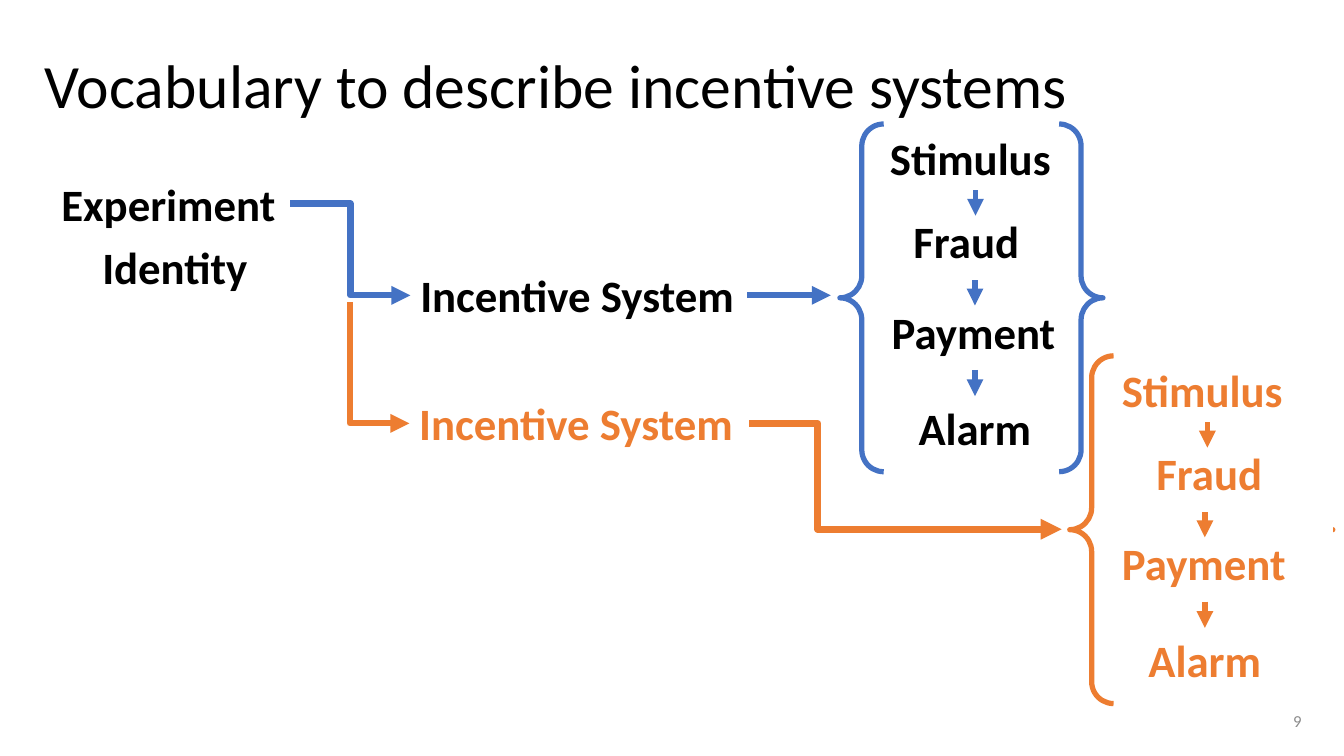
from dataclasses import dataclass

from pptx import Presentation
from pptx.dml.color import RGBColor as Rgb
from pptx.enum.shapes import MSO_CONNECTOR as Wire, MSO_SHAPE as Form
from pptx.enum.text import MSO_ANCHOR as Anchor, MSO_AUTO_SIZE as Fit, PP_ALIGN as Align
from pptx.oxml.ns import qn
from pptx.shapes.autoshape import Shape
from pptx.shapes.connector import Connector
from pptx.slide import Slide
from pptx.util import Inches, Pt
from lxml.etree import SubElement as add_node


@dataclass(frozen=True)
class Theme:
    font: str = "Calibri"
    black: str = "000000"
    white: str = "FFFFFF"
    gray: str = "8C8C8C"
    blue: str = "4472C4"
    orange: str = "ED7D31"
    title: float = 44
    label: float = 32
    number: float = 12
    brace: float = 3.75
    step: float = 4
    branch: float = 4.5
    drop: float = 5


@dataclass(frozen=True)
class Box:
    left: float
    top: float
    width: float
    height: float = 0.64

    def place(self) -> list[int]:
        return [Inches(n) for n in (self.left, self.top, self.width, self.height)]


@dataclass(frozen=True)
class Step:
    text: str
    left: float
    width: float


@dataclass(frozen=True)
class Flow:
    steps: tuple[Step, ...]
    left: float
    drop: float
    ink: str
    line: str
    half: bool = False


THEME = Theme()
TOPS = (1.25, 2.07, 2.97, 3.93)
SPANS = ((1.89, 2.14), (2.78, 3.03), (3.67, 3.93))
FLOWS = (
    Flow((Step("Stimulus ", 8.55, 2.25), Step("Fraud", 8.82, 1.53),
          Step("Payment", 8.69, 1.93), Step("Alarm", 8.87, 1.6)),
         8.33, 0, THEME.black, THEME.blue),
    Flow((Step("Stimulus ", 10.85, 2.25), Step("Fraud", 11.23, 1.53),
          Step("Payment ", 10.85, 2.28), Step("Alarm", 11.15, 1.6)),
         10.61, 2.3, THEME.orange, THEME.orange, half=True),
)


def write(shape: Shape, text: str, *, size: float = THEME.label, ink: str = THEME.black,
          bold: bool = True, align: Align = Align.LEFT, anchor: Anchor = Anchor.TOP,
          fit: Fit = Fit.SHAPE_TO_FIT_TEXT, space: float = 1.0) -> Shape:
    frame = shape.text_frame
    frame.word_wrap = True
    frame.auto_size = fit
    frame.vertical_anchor = anchor
    line = frame.paragraphs[0]
    line.alignment = align
    line.line_spacing = space
    run = line.add_run()
    run.text = text
    run.font.name = THEME.font
    run.font.size = Pt(size)
    run.font.bold = bold
    run.font.color.rgb = Rgb.from_string(ink)
    return shape


def label(slide: Slide, text: str, box: Box, **form) -> Shape:
    return write(slide.shapes.add_textbox(*box.place()), text, **form)


def arrow(slide: Slide, start: tuple[float, float], end: tuple[float, float], ink: str,
          width: float, bend: float | None = None) -> Connector:
    kind = Wire.STRAIGHT if bend is None else Wire.ELBOW
    wire = slide.shapes.add_connector(kind, *(Inches(n) for n in start + end))
    wire.line.color.rgb = Rgb.from_string(ink)
    wire.line.width = Pt(width)
    props = wire.element.spPr
    add_node(props.find(qn("a:ln")), qn("a:tailEnd"), type="triangle")
    add_node(props, qn("a:effectLst"))
    if bend is not None:
        guides = props.find(qn("a:prstGeom")).find(qn("a:avLst"))
        add_node(guides, qn("a:gd"), name="adj1", fmla=f"val {round(bend * 100000)}")
    return wire


def draw_flow(slide: Slide, flow: Flow) -> None:
    brace = slide.shapes.add_shape(
        Form.DOUBLE_BRACE, *Box(flow.left, 1.23 + flow.drop, 2.61, 3.45).place())
    brace.shadow.inherit = False
    brace.fill.background()
    brace.line.color.rgb = Rgb.from_string(flow.line)
    brace.line.width = Pt(THEME.brace)
    if flow.half:
        cover = slide.shapes.add_shape(Form.RECTANGLE, *Box(12.75, 3.43, 0.47, 3.63).place())
        cover.shadow.inherit = False
        cover.fill.solid()
        cover.fill.fore_color.rgb = Rgb.from_string(THEME.white)
        cover.line.fill.background()

    boxes = [label(slide, step.text, Box(step.left, top + flow.drop, step.width),
                   ink=flow.ink, align=Align.CENTER)
             for step, top in zip(flow.steps, TOPS)]
    mids = [step.left + step.width / 2 for step in flow.steps]
    wires = [arrow(slide, (x, top + flow.drop), (x, base + flow.drop), flow.line, THEME.step)
             for x, (top, base) in zip((mids[0], mids[-1], mids[-1]), SPANS)]
    wires[0].begin_connect(boxes[0], 2)
    wires[-1].end_connect(boxes[-1], 0)


def main() -> None:
    deck = Presentation()
    deck.slide_width, deck.slide_height = Inches(13.33), Inches(7.5)
    slide = deck.slides.add_slide(deck.slide_layouts[5])

    title = slide.shapes.title
    title.left, title.top, title.width, title.height = Box(0.34, 0.15, 12.66, 1.45).place()
    write(title, "Vocabulary to describe incentive systems", size=THEME.title, bold=False,
          anchor=Anchor.MIDDLE, fit=Fit.NONE, space=0.9)
    label(slide, "9", Box(10.01, 6.95, 3, 0.4), size=THEME.number, ink=THEME.gray,
          bold=False, align=Align.RIGHT, anchor=Anchor.MIDDLE, fit=Fit.NONE)

    label(slide, "Experiment", Box(0.51, 1.7, 2.37))
    label(slide, "Identity", Box(0.61, 2.33, 2.25), align=Align.CENTER)
    system = label(slide, "Incentive System", Box(4.07, 2.61, 3.34))
    label(slide, "Incentive System", Box(4.06, 3.88, 3.36), ink=THEME.orange)

    for flow in FLOWS:
        draw_flow(slide, flow)

    arrow(slide, (2.88, 2.02), (4.07, 2.93), THEME.blue, THEME.branch, bend=0.5)
    arrow(slide, (3.47, 3), (4.06, 4.2), THEME.orange, THEME.branch, bend=0)
    arrow(slide, (7.43, 4.2), (10.53, 5.25), THEME.orange, THEME.drop, bend=0.22)
    link = arrow(slide, (7.41, 2.93), (8.24, 2.93), THEME.blue, THEME.branch)
    link.begin_connect(system, 3)

    deck.save("out.pptx")


if __name__ == "__main__":
    main()
